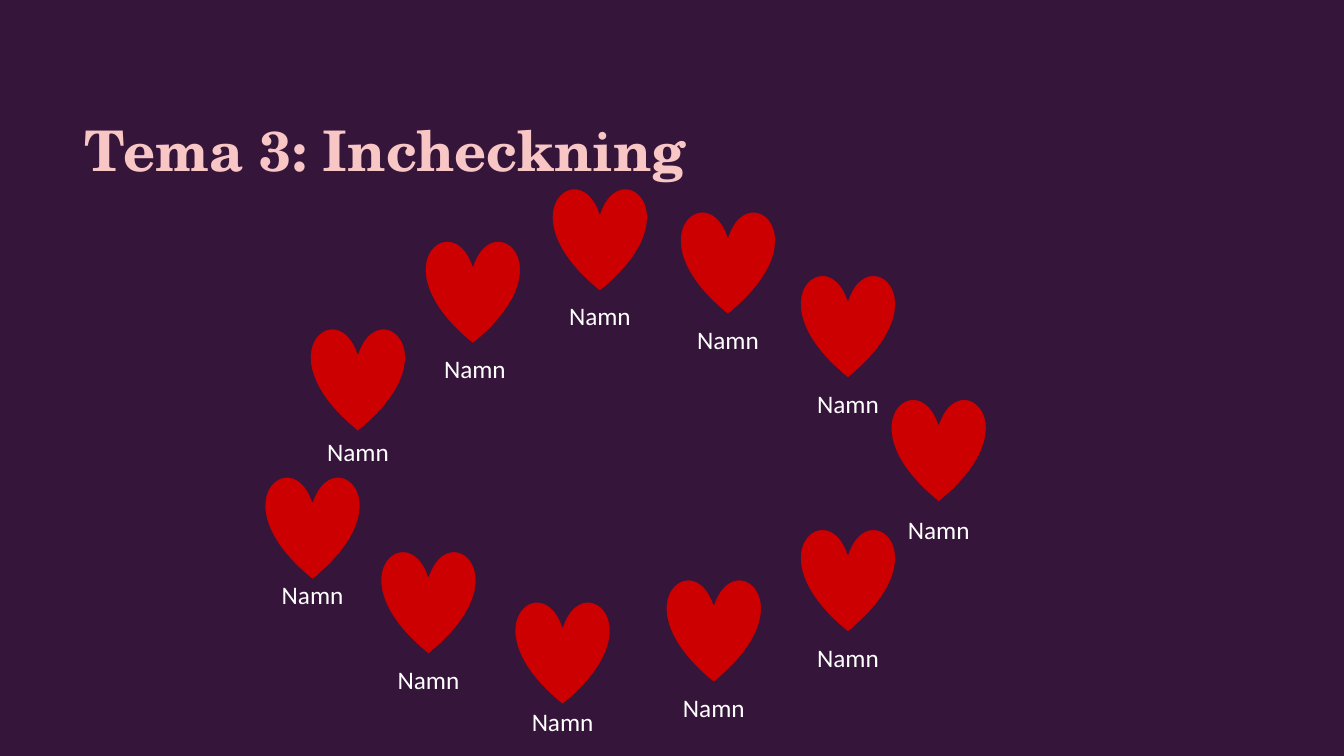
from dataclasses import dataclass
from typing import Any

import pptx
import pptx.dml.color
import pptx.enum.shapes
import pptx.enum.text
import pptx.util

EMU_PER_PX = 9144  # 100 px to the inch
BACKGROUND = "351539"
HEART_RED = "CC0000"
TITLE_PINK = "F8C6C5"
WHITE = "FFFFFF"
HEART_WIDTH, HEART_HEIGHT = 94, 103
LABEL_WIDTH, LABEL_HEIGHT = 122, 50


@dataclass(frozen=True)
class Participant:
    """A heart and the name under it; label_shift moves the name off centre."""
    left: int
    top: int
    label_top: int
    label_shift: int = 0


# Clockwise from the left end of the ring
PARTICIPANTS = [
    Participant(263, 472, 565),
    Participant(308, 325, 423),
    Participant(422, 238, 341, 2),
    Participant(548, 186, 288),
    Participant(675, 209, 312),
    Participant(794, 272, 375),
    Participant(884, 395, 500),
    Participant(794, 524, 627),
    Participant(661, 574, 677),
    Participant(511, 596, 691),
    Participant(378, 546, 649),
]


def px(length: int) -> pptx.util.Emu:
    return pptx.util.Emu(length * EMU_PER_PX)


def color(value: str) -> pptx.dml.color.RGBColor:
    return pptx.dml.color.RGBColor.from_string(value)


def set_attributes(target: Any, values: dict[str, Any]) -> None:
    for name, value in values.items():
        setattr(target, name, value)


def add_text(slide: Any, text: str, box: tuple[int, int, int, int], margin: int,
             font_format: dict[str, Any], font_color: str,
             frame_format: dict[str, Any], paragraph_format: dict[str, Any]) -> None:
    shape = slide.shapes.add_textbox(*map(px, box))
    frame = shape.text_frame
    sides = ("left", "top", "right", "bottom")
    set_attributes(frame, {f"margin_{side}": px(margin) for side in sides})
    set_attributes(frame, {"word_wrap": True, **frame_format})
    paragraph = frame.paragraphs[0]
    set_attributes(paragraph, paragraph_format)
    run = paragraph.add_run()
    run.text = text
    set_attributes(run.font, font_format)
    run.font.color.rgb = color(font_color)


def add_heart(slide: Any, participant: Participant) -> None:
    shape = slide.shapes.add_shape(
        pptx.enum.shapes.MSO_SHAPE.HEART, px(participant.left), px(participant.top),
        px(HEART_WIDTH), px(HEART_HEIGHT))
    shape.shadow.inherit = False
    shape.fill.solid()
    shape.fill.fore_color.rgb = color(HEART_RED)
    shape.line.color.rgb = color(BACKGROUND)
    shape.line.width = pptx.util.Pt(0.75)


def add_label(slide: Any, participant: Participant) -> None:
    left = participant.left + (HEART_WIDTH - LABEL_WIDTH) // 2 + participant.label_shift
    add_text(slide, "Namn", (left, participant.label_top, LABEL_WIDTH, LABEL_HEIGHT), 10,
             {"name": "Calibri", "size": pptx.util.Pt(18)}, WHITE,
             {"vertical_anchor": pptx.enum.text.MSO_ANCHOR.TOP},
             {"alignment": pptx.enum.text.PP_ALIGN.CENTER})


def main() -> None:
    presentation = pptx.Presentation()
    set_attributes(presentation, {"slide_width": px(1333), "slide_height": px(750)})
    slide = presentation.slides.add_slide(presentation.slide_layouts[6])
    slide.background.fill.solid()
    slide.background.fill.fore_color.rgb = color(BACKGROUND)

    add_text(slide, "Tema 3: Incheckning", (84, 80, 1166, 101), 0,
             {"name": "TeX Gyre Schola", "size": pptx.util.Pt(40), "bold": True}, TITLE_PINK,
             {"vertical_anchor": pptx.enum.text.MSO_ANCHOR.BOTTOM},
             {"line_spacing": pptx.util.Pt(68)})
    for participant in PARTICIPANTS:
        add_heart(slide, participant)
    for participant in PARTICIPANTS:
        add_label(slide, participant)

    presentation.save("out.pptx")


if __name__ == "__main__":
    main()
